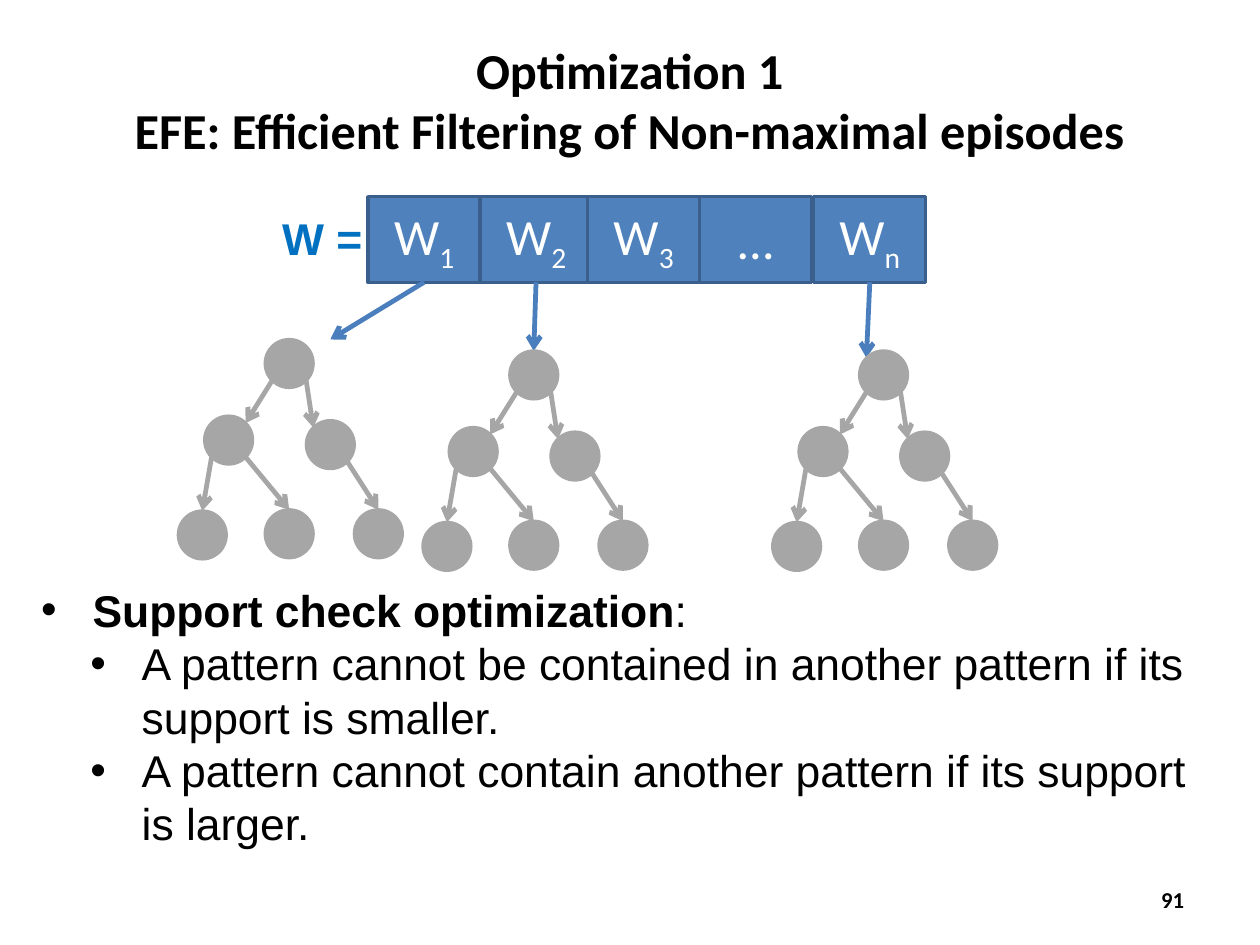
import math
from dataclasses import dataclass

from lxml import etree
from pptx import Presentation
from pptx.dml.color import RGBColor
from pptx.enum import shapes, text
from pptx.oxml import ns
from pptx.util import Cm, Inches, Pt

HEADING = ["Optimization 1", "EFE: Efficient Filtering of Non-maximal episodes"]
WINDOWS = [(3.22, "W", "1"), (4.2, "W", "2"), (5.14, "W", "3"), (6.12, "…", ""), (7.12, "W", "n")]
WINDOW_LABEL = "W ="
POINTS = [
    (0, [("Support check optimization", True), (":", False)]),
    (1, [("A pattern cannot be contained in another pattern if its support is smaller.", False)]),
    (1, [("A pattern cannot contain another pattern if its support is larger.", False)]),
]
PAGE = "91"

WINDOW_TOP, WINDOW_WIDTH, WINDOW_HEIGHT = 1.72, 0.98, 0.75
NODE_SIZE = 0.42
TREE_ROOTS = [(2.32, 2.97), (4.46, 3.07), (7.52, 3.07)]
WINDOW_LINKS = [((3.71, 2.47), (2.89, 2.97)), ((4.69, 2.47), (4.67, 3.07)), ((7.61, 2.47), (7.58, 3.13))]
NODES = {
    "root": (0, 0), "left": (-0.53, 0.67), "right": (0.36, 0.71),
    "leaf 1": (-0.76, 1.5), "leaf 2": (0, 1.49), "leaf 3": (0.78, 1.49),
}
TOP, UPPER_LEFT, UPPER_RIGHT, LOWER_LEFT, LOWER_RIGHT = -90, -135, -45, 135, 45
BRANCHES = [
    ("root", LOWER_LEFT, "left", UPPER_RIGHT),
    ("root", LOWER_RIGHT, "right", UPPER_LEFT),
    ("left", LOWER_LEFT, "leaf 1", TOP),
    ("left", LOWER_RIGHT, "leaf 2", TOP),
    ("right", LOWER_RIGHT, "leaf 3", TOP),
]


@dataclass(frozen=True)
class Theme:
    window: RGBColor = RGBColor(0x4F, 0x81, 0xBD)
    window_edge: RGBColor = RGBColor(0x3A, 0x5F, 0x8C)
    link: RGBColor = RGBColor(0x4B, 0x7E, 0xBC)
    node: RGBColor = RGBColor(0xA6, 0xA6, 0xA6)
    label: RGBColor = RGBColor(0x00, 0x70, 0xC0)
    ink: RGBColor = RGBColor(0, 0, 0)
    light: RGBColor = RGBColor(255, 255, 255)
    heading_font: str = "Calibri"
    body_font: str = "Arial"
    heading_size: float = 31.7
    window_size: float = 32
    body_size: float = 28
    page_size: float = 14.3
    edge: float = 2
    arrow: float = 3


THEME = Theme()


def place(item, left, top, width, height):
    item.left, item.top, item.width, item.height = map(Inches, (left, top, width, height))


def add_run(paragraph, words, font, size, color, bold=False):
    run = paragraph.add_run()
    run.text = words
    run.font.name, run.font.size, run.font.bold = font, Pt(size), bold
    run.font.color.rgb = color
    return run


def add_figure(slide, kind, box, fill, edge):
    figure = slide.shapes.add_shape(kind, *map(Inches, box))
    figure.shadow.inherit = False
    figure.fill.solid()
    figure.fill.fore_color.rgb = fill
    figure.line.color.rgb = edge
    figure.line.width = Pt(THEME.edge)
    return figure


def add_arrow(slide, start, end, color):
    arrow = slide.shapes.add_connector(shapes.MSO_CONNECTOR.STRAIGHT, *map(Inches, (*start, *end)))
    arrow.line.color.rgb = color
    arrow.line.width = Pt(THEME.arrow)
    properties = arrow._element.spPr
    etree.SubElement(properties.find(ns.qn("a:ln")), ns.qn("a:tailEnd"), type="arrow")
    etree.SubElement(properties, ns.qn("a:effectLst"))


def add_heading(slide):
    heading = slide.shapes.title
    place(heading, 0, 0.44, 11.02, 0.86)
    frame = heading.text_frame
    frame.auto_size = text.MSO_AUTO_SIZE.NONE
    frame.vertical_anchor = text.MSO_ANCHOR.MIDDLE
    paragraph = frame.paragraphs[0]
    paragraph.alignment = text.PP_ALIGN.CENTER
    for number, words in enumerate(HEADING):
        if number:
            paragraph.add_line_break()
        add_run(paragraph, words, THEME.heading_font, THEME.heading_size, THEME.ink, True)


def add_points(slide):
    points = slide.placeholders[1]
    place(points, 0.26, 5.05, 10.58, 2.99)
    frame = points.text_frame
    frame.auto_size = text.MSO_AUTO_SIZE.NONE
    for number, (level, runs) in enumerate(POINTS):
        paragraph = frame.add_paragraph() if number else frame.paragraphs[0]
        paragraph.level = level
        paragraph.space_before = Pt(0)
        for words, bold in runs:
            add_run(paragraph, words, THEME.body_font, THEME.body_size, THEME.ink, bold)
        properties = paragraph._p.get_or_add_pPr()
        properties.set("marL", str(Inches(0.45 + 0.43 * level)))
        properties.set("indent", str(Inches(-0.45)))
        etree.SubElement(properties, ns.qn("a:buFont"), typeface=THEME.body_font)
        etree.SubElement(properties, ns.qn("a:buChar"), char="•")


def add_windows(slide):
    for left, name, index in WINDOWS:
        box = (left, WINDOW_TOP, WINDOW_WIDTH, WINDOW_HEIGHT)
        window = add_figure(slide, shapes.MSO_SHAPE.RECTANGLE, box, THEME.window, THEME.window_edge)
        window.text_frame.vertical_anchor = text.MSO_ANCHOR.MIDDLE
        paragraph = window.text_frame.paragraphs[0]
        paragraph.alignment = text.PP_ALIGN.CENTER
        add_run(paragraph, name, THEME.heading_font, THEME.window_size, THEME.light)
        if index:
            subscript = add_run(paragraph, index, THEME.heading_font, THEME.window_size, THEME.light)
            subscript.font._element.set("baseline", "-25000")
    label = slide.shapes.add_textbox(*map(Inches, (2.37, 1.8, 1.01, 0.57)))
    label.text_frame.word_wrap = False
    add_run(label.text_frame.paragraphs[0], WINDOW_LABEL, THEME.body_font, THEME.body_size, THEME.label, True)
    for start, end in WINDOW_LINKS:
        add_arrow(slide, start, end, THEME.link)


def add_tree(slide, left, top):
    radius = NODE_SIZE / 2

    def rim(node, angle):
        x, y = NODES[node]
        turn = math.radians(angle)
        return left + x + radius * (1 + math.cos(turn)), top + y + radius * (1 + math.sin(turn))

    for x, y in NODES.values():
        box = (left + x, top + y, NODE_SIZE, NODE_SIZE)
        add_figure(slide, shapes.MSO_SHAPE.OVAL, box, THEME.node, THEME.node)
    for parent, leaving, child, arriving in BRANCHES:
        add_arrow(slide, rim(parent, leaving), rim(child, arriving), THEME.node)


def add_page(slide):
    page = slide.shapes.add_textbox(*map(Inches, (7.9, 7.66, 2.57, 0.44)))
    frame = page.text_frame
    frame.word_wrap = True
    frame.vertical_anchor = text.MSO_ANCHOR.MIDDLE
    frame.margin_left = frame.margin_right = Inches(0.11)
    frame.margin_top = frame.margin_bottom = Inches(0.06)
    paragraph = frame.paragraphs[0]
    paragraph.alignment = text.PP_ALIGN.RIGHT
    paragraph.line_spacing = 0.93
    add_run(paragraph, PAGE, THEME.heading_font, THEME.page_size, THEME.ink, True)


def main():
    """Build the slide on filtering non-maximal episodes."""
    deck = Presentation()
    deck.slide_width, deck.slide_height = Cm(28), Cm(21)
    slide = deck.slides.add_slide(deck.slide_layouts[1])
    add_heading(slide)
    add_points(slide)
    add_windows(slide)
    for left, top in TREE_ROOTS:
        add_tree(slide, left, top)
    add_page(slide)
    deck.save("out.pptx")


if __name__ == "__main__":
    main()
